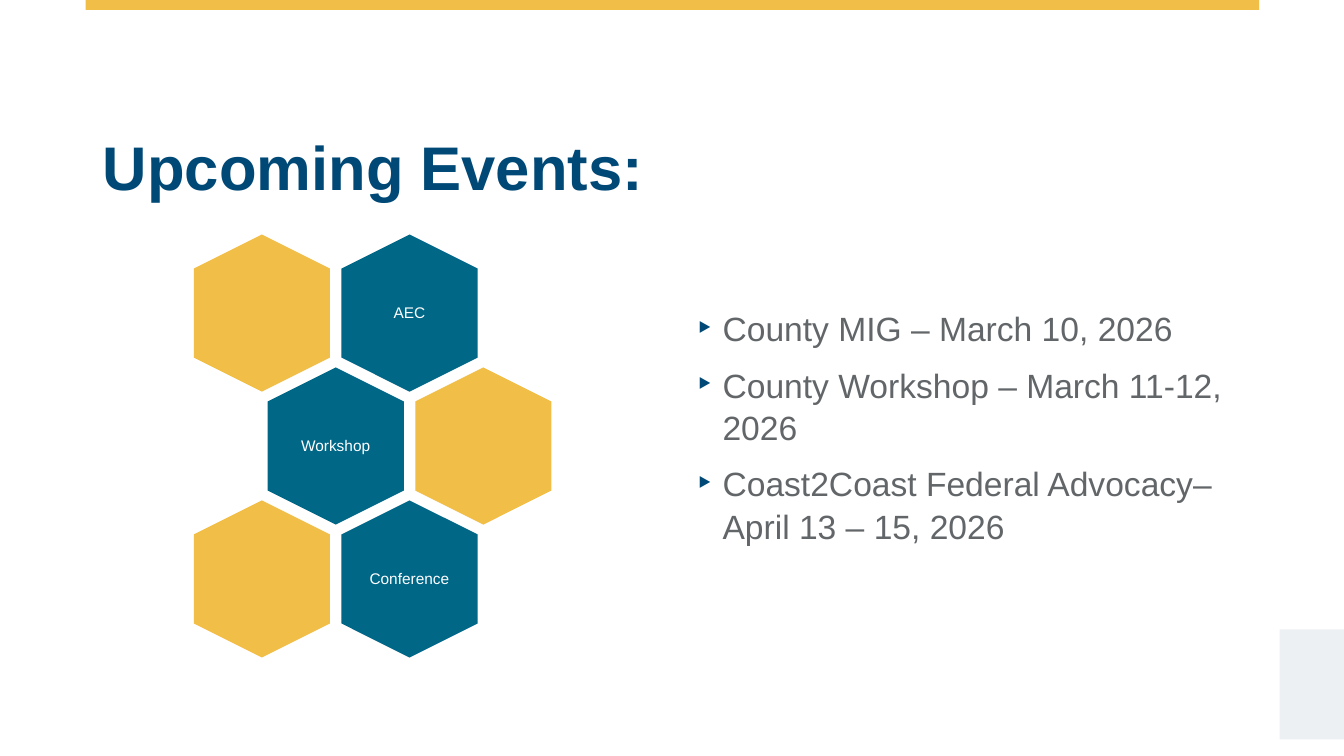
import pptx
import pptx.util
import pptx.dml.color
import pptx.enum.shapes
import pptx.enum.text
import lxml.etree

Cm = pptx.util.Cm
Pt = pptx.util.Pt
FONT = "Arial"
COLORS = {
    "navy": "004976",
    "teal": "006787",
    "gold": "F1BE48",
    "mist": "EDF0F2",
    "gray": "626669",
    "white": "FFFFFF",
}

# Honeycomb geometry in centimetres; each hexagon is turned by 90 degrees
HEX_LENGTH, HEX_WIDTH = 3.96, 3.43
FIRST_CENTER_X, FIRST_CENTER_Y = 6.6, 7.89
COLUMN_STEP, ROW_STEP = 3.72, 3.35
# One row per event; an empty string is a plain gold cell
HONEYCOMB = [("", "AEC"), ("Workshop", ""), ("", "Conference")]

EVENTS = [
    "County MIG – March 10, 2026",
    "County Workshop – March 11-12, 2026",
    "Coast2Coast Federal Advocacy– April 13 – 15, 2026",
]


def color(name):
    return pptx.dml.color.RGBColor.from_string(COLORS[name])


def add_filled(shapes, kind, left, top, width, height, fill):
    filled = shapes.add_shape(kind, Cm(left), Cm(top), Cm(width), Cm(height))
    filled.shadow.inherit = False
    filled.fill.solid()
    filled.fill.fore_color.rgb = color(fill)
    filled.line.fill.background()
    return filled


def set_frame(frame, anchor, insets):
    frame.word_wrap = True
    frame.auto_size = pptx.enum.text.MSO_AUTO_SIZE.NONE
    frame.vertical_anchor = anchor
    (frame.margin_left, frame.margin_top,
     frame.margin_right, frame.margin_bottom) = [Cm(inset) for inset in insets]


def add_run(paragraph, text, size, ink, bold=False):
    run = paragraph.add_run()
    run.text = text
    run.font.name = FONT
    run.font.size = Pt(size)
    run.font.bold = bold
    run.font.color.rgb = color(ink)


def add_bullet(paragraph):
    properties = paragraph._p.get_or_add_pPr()
    properties.set("marL", str(Cm(0.64)))
    properties.set("indent", str(-Cm(0.64)))
    tag = pptx.oxml.ns.qn
    bullet_color = lxml.etree.SubElement(properties, tag("a:buClr"))
    lxml.etree.SubElement(bullet_color, tag("a:srgbClr"), val=COLORS["navy"])
    lxml.etree.SubElement(properties, tag("a:buSzPct"), val="120000")
    lxml.etree.SubElement(properties, tag("a:buFont"), typeface=FONT)
    lxml.etree.SubElement(properties, tag("a:buChar"), char="‣")


def set_title(slide, text):
    title = slide.shapes.title
    title.left, title.top = Cm(2.34), Cm(1.02)
    title.width, title.height = Cm(29.21), Cm(4.32)
    set_frame(title.text_frame, pptx.enum.text.MSO_ANCHOR.BOTTOM,
              (0.25, 0, 0.25, 0.25))
    heading = title.text_frame.paragraphs[0]
    heading.alignment = pptx.enum.text.PP_ALIGN.LEFT
    heading.line_spacing = 0.8
    add_run(heading, text, 44, "navy", bold=True)


def add_cell(shapes, center_x, center_y, label):
    hexagon = add_filled(
        shapes, pptx.enum.shapes.MSO_SHAPE.HEXAGON,
        center_x - HEX_LENGTH / 2, center_y - HEX_WIDTH / 2,
        HEX_LENGTH, HEX_WIDTH, "teal" if label else "gold")
    hexagon.rotation = 90
    hexagon.adjustments[0] = 0.25
    if not label:
        return
    # The label stays upright in a box of its own
    width, height = 2.36, 2.72
    caption = shapes.add_textbox(Cm(center_x - width / 2),
                                 Cm(center_y - height / 2),
                                 Cm(width), Cm(height))
    set_frame(caption.text_frame, pptx.enum.text.MSO_ANCHOR.MIDDLE, [0.12] * 4)
    line = caption.text_frame.paragraphs[0]
    line.alignment = pptx.enum.text.PP_ALIGN.CENTER
    line.line_spacing = 0.9
    add_run(line, label, 11, "white")


def add_honeycomb(slide):
    honeycomb = slide.shapes.add_group_shape()
    for row, labels in enumerate(HONEYCOMB):
        shift = COLUMN_STEP / 2 * (row % 2)
        for column, label in enumerate(labels):
            add_cell(honeycomb.shapes,
                     FIRST_CENTER_X + shift + column * COLUMN_STEP,
                     FIRST_CENTER_Y + row * ROW_STEP, label)


def add_event_list(slide):
    event_list = slide.shapes.add_textbox(Cm(17.32), Cm(5.33),
                                          Cm(14.22), Cm(11.84))
    frame = event_list.text_frame
    set_frame(frame, pptx.enum.text.MSO_ANCHOR.TOP, (0.25, 2.39, 0.25, 0.25))
    for index, event in enumerate(EVENTS):
        entry = frame.add_paragraph() if index else frame.paragraphs[0]
        add_bullet(entry)
        entry.line_spacing = 1.05
        entry.space_before = Pt(10 if index else 0)
        add_run(entry, event, 24, "gray")


def main():
    deck = pptx.Presentation()
    deck.slide_width, deck.slide_height = Cm(33.87), Cm(19.05)
    slide = deck.slides.add_slide(deck.slide_layouts[5])

    # Page trim: top bar and corner block
    rectangle = pptx.enum.shapes.MSO_SHAPE.RECTANGLE
    add_filled(slide.shapes, rectangle, 2.16, 0, 29.57, 0.25, "gold")
    add_filled(slide.shapes, rectangle, 32.25, 15.86, 1.62, 2.77, "mist")

    # Content
    set_title(slide, "Upcoming Events:")
    add_honeycomb(slide)
    add_event_list(slide)

    deck.save("out.pptx")


if __name__ == "__main__":
    main()
